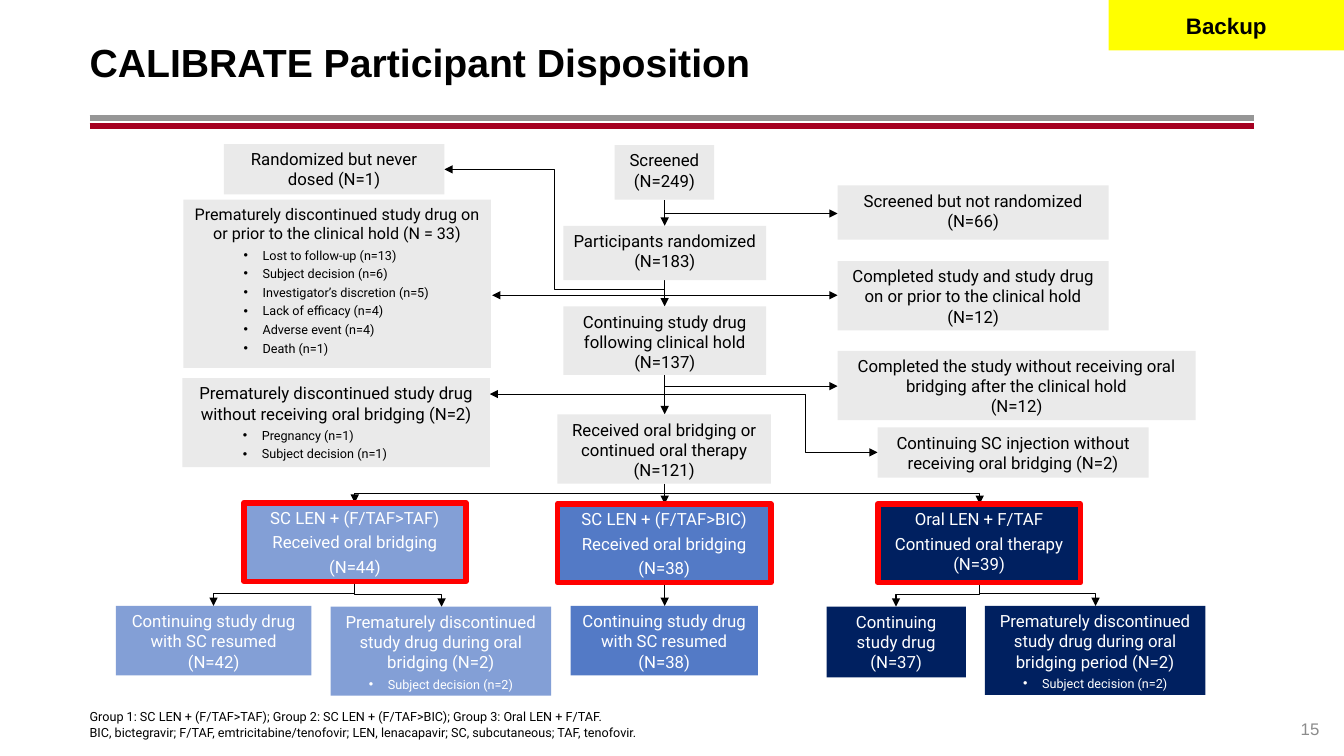
"""Build the CALIBRATE participant disposition slide."""
from lxml import etree
from pptx import Presentation
from pptx.dml.color import RGBColor
from pptx.enum.shapes import MSO_CONNECTOR, MSO_SHAPE
from pptx.enum.text import MSO_ANCHOR, PP_ALIGN
from pptx.oxml.ns import qn
from pptx.util import Cm, Pt

GREY, LIGHT, MID, NAVY = "EAEAEA", "839FD6", "537AC6", "002060"
BLACK, WHITE, RED = "000000", "FFFFFF", "FF0000"

deck = Presentation()
deck.slide_width, deck.slide_height = Cm(33.87), Cm(19.05)
slide = deck.slides.add_slide(deck.slide_layouts[6])


def write(paragraph, text, size, color, align, font="Roboto", bold=False):
    paragraph.alignment = align
    for number, line in enumerate(text.split("\n")):
        if number:
            paragraph.add_line_break()
        run = paragraph.add_run()
        run.text = line
        run.font.name, run.font.size, run.font.bold = font, Pt(size), bold
        run.font.color.rgb = RGBColor.from_string(color)


def connect(kind, x1, y1, x2, y2, color=BLACK, width=0.75, arrow=True, turn=0, bend=0.5):
    line = slide.shapes.add_connector(kind, Cm(x1), Cm(y1), Cm(x2), Cm(y2))
    line.line.color.rgb = RGBColor.from_string(color)
    line.line.width = Pt(width)
    properties = line._element.spPr
    if arrow:
        etree.SubElement(properties.find(qn("a:ln")), qn("a:tailEnd"), type="triangle")
    if turn:
        properties.find(qn("a:xfrm")).set("rot", str(turn * 60000))
    if bend != 0.5:
        guides = properties.find(qn("a:prstGeom")).find(qn("a:avLst"))
        etree.SubElement(guides, qn("a:gd"), name="adj1", fmla=f"val {round(bend * 100000)}")
    etree.SubElement(properties, qn("a:effectLst"))


for rule_y, rule_color in [(2.97, "969696"), (3.18, "A50021")]:
    connect(MSO_CONNECTOR.STRAIGHT, 2.26, rule_y, 31.6, rule_y, rule_color, 4.25, False)

captions = [
    (2.26, 0.46, 29.34, 2.18, "CALIBRATE Participant Disposition",
     28, BLACK, PP_ALIGN.LEFT, "Arial", True, MSO_ANCHOR.MIDDLE),
    (2.26, 17.37, 29.34, 1.27,
     "Group 1: SC LEN + (F/TAF>TAF); Group 2: SC LEN + (F/TAF>BIC); Group 3: Oral LEN + F/TAF.\n"
     "BIC, bictegravir; F/TAF, emtricitabine/tenofovir; LEN, lenacapavir; SC, subcutaneous; TAF, tenofovir.",
     9, BLACK, PP_ALIGN.LEFT, "Roboto", False, MSO_ANCHOR.BOTTOM),
    (31.6, 17.6, 1.65, 1.02, "15",
     12, "8C8C8C", PP_ALIGN.RIGHT, "Arial", False, MSO_ANCHOR.BOTTOM),
]
for left, top, width, height, text, size, color, align, font, bold, anchor in captions:
    frame = slide.shapes.add_textbox(Cm(left), Cm(top), Cm(width), Cm(height)).text_frame
    frame.word_wrap, frame.vertical_anchor = True, anchor
    frame.margin_left = frame.margin_right = frame.margin_top = frame.margin_bottom = 0
    write(frame.paragraphs[0], text, size, color, align, font, bold)

axis, group1, group3 = 16.75, 8.94, 24.69

for start, end in [(5.03, 5.69), (7.06, 7.72), (9.45, 10.44), (12.19, 12.7), (14.66, 15.27)]:
    connect(MSO_CONNECTOR.STRAIGHT, axis, start, axis, end)
for side_y, side_x in [(5.38, 21.11), (7.44, 21.11), (9.73, 21.11), (7.44, 12.4), (9.93, 12.34)]:
    connect(MSO_CONNECTOR.STRAIGHT, axis, side_y, side_x, side_y)
connect(MSO_CONNECTOR.ELBOW, axis, 9.93, 22.12, 11.4, bend=0.66)
connect(MSO_CONNECTOR.ELBOW, axis, 7.29, 11.2, 4.27)

branches = [
    (axis, 12.19, group1, 12.67), (axis, 12.19, group3, 12.7),
    (group1, 14.66, 5.38, 15.27), (group1, 14.66, 11.13, 15.29),
    (group3, 14.66, 22.58, 15.29), (group3, 14.66, 27.61, 15.27),
]
for x1, y1, x2, y2 in branches:
    middle_x, middle_y = (x1 + x2) / 2, (y1 + y2) / 2
    drop, reach = (y2 - y1) / 2, abs(x2 - x1) / 2
    toward = 1 if x2 < x1 else -1
    connect(MSO_CONNECTOR.ELBOW, middle_x - toward * drop, middle_y - reach,
            middle_x + toward * drop, middle_y + reach, turn=90 if toward == 1 else 270)

boxes = [
    (15.49, 3.66, 2.51, 1.37, GREY, ["Screened (N=249)"], []),
    (14.2, 5.69, 5.11, 1.37, GREY, ["Participants randomized (N=183)"], []),
    (14.2, 7.72, 5.11, 1.73, GREY, ["Continuing study drug following clinical hold\n(N=137)"], []),
    (14.05, 10.44, 5.38, 1.75, GREY,
     ["Received oral bridging or continued oral therapy\n(N=121)"], []),
    (21.11, 4.67, 6.83, 1.37, GREY, ["Screened but not randomized\n(N=66)"], []),
    (21.11, 6.58, 6.83, 1.75, GREY,
     ["Completed study and study drug on or prior to the clinical hold\n(N=12)"], []),
    (21.11, 8.84, 9.02, 1.75, GREY,
     ["Completed the study without receiving oral bridging after the clinical hold\n(N=12)"], []),
    (22.12, 10.77, 6.83, 1.27, GREY,
     ["Continuing SC injection without receiving oral bridging (N=2)"], []),
    (5.64, 3.63, 5.56, 1.27, GREY, ["Randomized but never dosed (N=1)"], []),
    (4.62, 5.03, 7.75, 4.24, GREY,
     ["Prematurely discontinued study drug on or prior to the clinical hold (N = 33)"],
     ["Lost to follow-up (n=13)", "Subject decision (n=6)", "Investigator’s discretion (n=5)",
      "Lack of efficacy (n=4)", "Adverse event (n=4)", "Death (n=1)"]),
    (4.6, 9.53, 7.75, 2.24, GREY,
     ["Prematurely discontinued study drug without receiving oral bridging (N=2)"],
     ["Pregnancy (n=1)", "Subject decision (n=1)"]),
    (6.15, 12.67, 5.59, 1.98, LIGHT,
     ["SC LEN + (F/TAF>TAF)", "Received oral bridging", "(N=44)"], []),
    (14.05, 12.7, 5.38, 1.98, MID,
     ["SC LEN + (F/TAF>BIC)", "Received oral bridging", "(N=38)"], []),
    (22.12, 12.7, 5.11, 1.98, NAVY,
     ["Oral LEN + F/TAF", "Continued oral therapy\n(N=39)"], []),
    (2.92, 15.27, 4.93, 1.75, LIGHT, ["Continuing study drug with SC resumed\n(N=42)"], []),
    (8.33, 15.29, 5.56, 2.24, LIGHT,
     ["Prematurely discontinued study drug during oral bridging (N=2)"],
     ["Subject decision (n=2)"]),
    (14.38, 15.27, 4.72, 1.75, MID, ["Continuing study drug with SC resumed\n(N=38)"], []),
    (20.83, 15.29, 3.51, 1.78, NAVY, ["Continuing study drug\n(N=37)"], []),
    (24.82, 15.27, 5.56, 2.24, NAVY,
     ["Prematurely discontinued study drug during oral bridging period (N=2)"],
     ["Subject decision (n=2)"]),
]
for left, top, width, height, fill, statements, reasons in boxes:
    box = slide.shapes.add_shape(MSO_SHAPE.RECTANGLE, Cm(left), Cm(top), Cm(width), Cm(height))
    box.shadow.inherit = False
    box.fill.solid()
    box.fill.fore_color.rgb = RGBColor.from_string(fill)
    if len(statements) > 1:
        box.line.color.rgb = RGBColor.from_string(RED)
        box.line.width = Pt(4)
    else:
        box.line.fill.background()
    frame = box.text_frame
    frame.word_wrap, frame.vertical_anchor = True, MSO_ANCHOR.TOP
    ink = BLACK if fill == GREY else WHITE
    statement_size = 11.5 if len(reasons) > 2 else 12
    for number, text in enumerate(statements + reasons):
        paragraph = frame.add_paragraph() if number else frame.paragraphs[0]
        if number < len(statements):
            write(paragraph, text, statement_size, ink, PP_ALIGN.CENTER)
            paragraph.space_after = Pt(3)
            continue
        write(paragraph, text, 9, ink, PP_ALIGN.LEFT if fill == GREY else PP_ALIGN.CENTER)
        paragraph.space_after = Pt(2.5)
        layout = paragraph._p.get_or_add_pPr()
        layout.set("marL", str(Cm(1.75 if fill == GREY else 0.48)))
        layout.set("indent", str(Cm(-0.48)))
        etree.SubElement(layout, qn("a:buFont"), typeface="Arial")
        etree.SubElement(layout, qn("a:buChar"), char="•")

backup = slide.shapes.add_shape(MSO_SHAPE.RECTANGLE, Cm(27.94), 0, Cm(5.93), Cm(1.27))
backup.shadow.inherit = False
backup.fill.solid()
backup.fill.fore_color.rgb = RGBColor.from_string("FFFF00")
backup.line.fill.background()
backup.text_frame.vertical_anchor = MSO_ANCHOR.MIDDLE
write(backup.text_frame.paragraphs[0], "Backup", 16, BLACK, PP_ALIGN.CENTER, "Arial", True)

deck.save("out.pptx")
